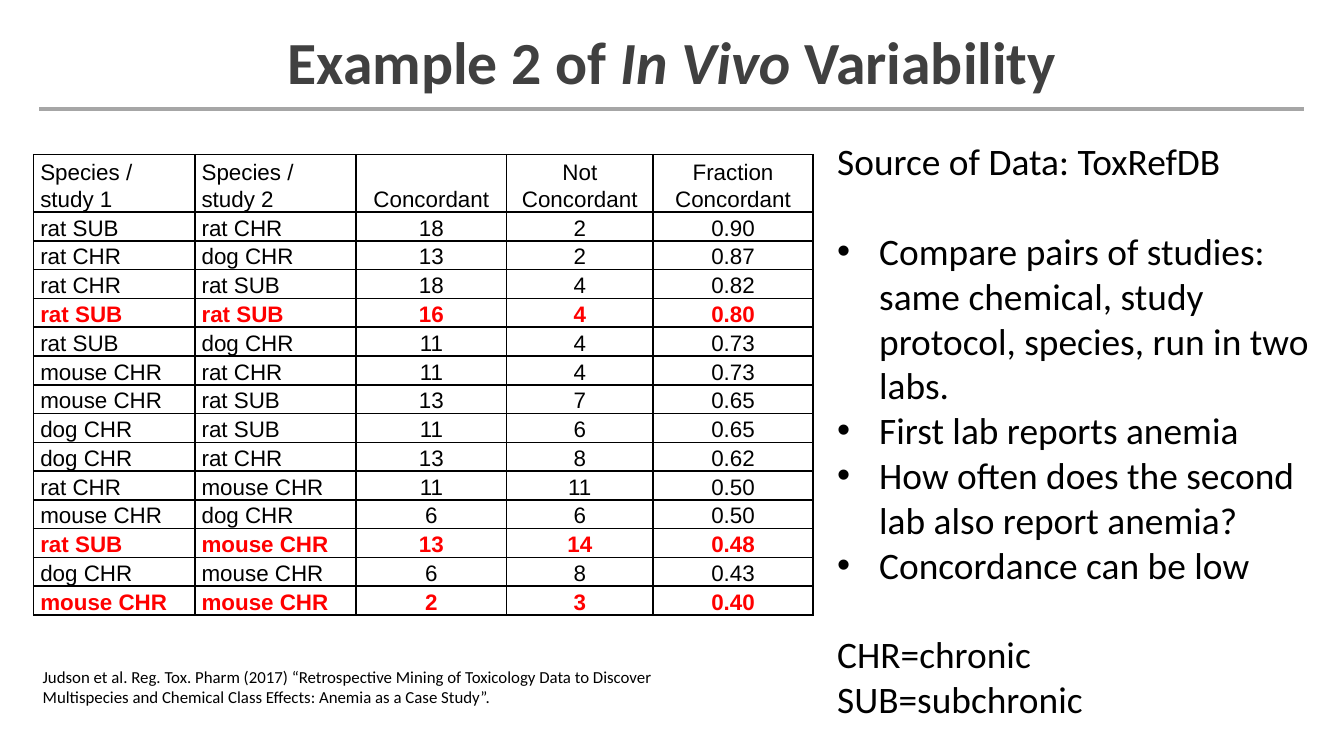
from lxml.etree import SubElement
from pptx import Presentation
from pptx.dml.color import RGBColor
from pptx.enum.shapes import MSO_CONNECTOR
from pptx.enum.text import MSO_ANCHOR, PP_ALIGN
from pptx.oxml.ns import qn
from pptx.util import Pt


def color(hex_string):
    return RGBColor.from_string(hex_string)


def format_runs(paragraph, size, font_name="Calibri", hex_string="000000", bold=False):
    for run in paragraph.runs:
        run.font.size = Pt(size)
        run.font.name = font_name
        run.font.bold = bold
        run.font.color.rgb = color(hex_string)


presentation = Presentation()
presentation.slide_width = Pt(720)
presentation.slide_height = Pt(405)
slide = presentation.slides.add_slide(presentation.slide_layouts[6])

# Title and rule
rule = slide.shapes.add_connector(MSO_CONNECTOR.STRAIGHT, Pt(21), Pt(58.5), Pt(698.5), Pt(58.5))
rule.line.color.rgb = color("A6A6A6")
rule.line.width = Pt(2.5)
SubElement(rule._element.spPr, qn("a:effectLst"))

title = slide.shapes.add_textbox(Pt(54), Pt(-1.4), Pt(612), Pt(67.7))
title.text_frame.word_wrap = True
title.text_frame.vertical_anchor = MSO_ANCHOR.MIDDLE
paragraph = title.text_frame.paragraphs[0]
paragraph.alignment = PP_ALIGN.CENTER
for text, italic in [("Example 2 of ", False), ("In Vivo", True), (" Variability", False)]:
    run = paragraph.add_run()
    run.text = text
    run.font.italic = italic
format_runs(paragraph, 32, hex_string="404040", bold=True)

# Concordance table
rows = [
    ("Species / study 1", "Species / study 2", "Concordant", "Not Concordant", "Fraction Concordant"),
    ("rat SUB", "rat CHR", "18", "2", "0.90"),
    ("rat CHR", "dog CHR", "13", "2", "0.87"),
    ("rat CHR", "rat SUB", "18", "4", "0.82"),
    ("rat SUB", "rat SUB", "16", "4", "0.80"),
    ("rat SUB", "dog CHR", "11", "4", "0.73"),
    ("mouse CHR", "rat CHR", "11", "4", "0.73"),
    ("mouse CHR", "rat SUB", "13", "7", "0.65"),
    ("dog CHR", "rat SUB", "11", "6", "0.65"),
    ("dog CHR", "rat CHR", "13", "8", "0.62"),
    ("rat CHR", "mouse CHR", "11", "11", "0.50"),
    ("mouse CHR", "dog CHR", "6", "6", "0.50"),
    ("rat SUB", "mouse CHR", "13", "14", "0.48"),
    ("dog CHR", "mouse CHR", "6", "8", "0.43"),
    ("mouse CHR", "mouse CHR", "2", "3", "0.40"),
]
highlighted_rows = {4, 12, 14}
column_widths = [86.4, 86.4, 80.6, 78.5, 85.7]
header_height, row_height = 30.7, 15.4

table = slide.shapes.add_table(
    len(rows), len(column_widths), Pt(18), Pt(82.8),
    Pt(sum(column_widths)), Pt(header_height + row_height * (len(rows) - 1)),
).table
table.first_row = False
table.horz_banding = False
for column, width in zip(table.columns, column_widths):
    column.width = Pt(width)

for row_index, values in enumerate(rows):
    table.rows[row_index].height = Pt(row_height if row_index else header_height)
    highlighted = row_index in highlighted_rows
    for column_index, value in enumerate(values):
        cell = table.cell(row_index, column_index)
        cell.margin_left = cell.margin_right = Pt(3.6)
        cell.margin_top = cell.margin_bottom = 0
        cell.vertical_anchor = MSO_ANCHOR.BOTTOM
        for side in ("a:lnL", "a:lnR", "a:lnT", "a:lnB"):
            border = SubElement(cell._tc.get_or_add_tcPr(), qn(side), w=str(Pt(1)))
            SubElement(SubElement(border, qn("a:solidFill")), qn("a:srgbClr"), val="000000")
        cell.fill.solid()
        cell.fill.fore_color.rgb = color("FFFFFF")
        cell.text_frame.text = value
        paragraph = cell.text_frame.paragraphs[0]
        paragraph.line_spacing = 1.07
        paragraph.alignment = PP_ALIGN.LEFT if column_index < 2 else PP_ALIGN.CENTER
        format_runs(paragraph, 12, "Arial", "FF0000" if highlighted else "000000", highlighted)

# Citation
citation = slide.shapes.add_textbox(Pt(15.8), Pt(353.5), Pt(341.3), Pt(28.8))
citation.text_frame.word_wrap = True
citation.text_frame.text = (
    "Judson et al. Reg. Tox. Pharm (2017) “Retrospective Mining of Toxicology Data to Discover "
    "Multispecies and Chemical Class Effects: Anemia as a Case Study”."
)
format_runs(citation.text_frame.paragraphs[0], 9)

# Explanation beside the table
bullets = [
    "Compare pairs of studies: same chemical, study protocol, species, run in two labs.",
    "First lab reports anemia",
    "How often does the second lab also report anemia?",
    "Concordance can be low",
]
abbreviations = ["CHR=chronic", "SUB=subchronic"]
explanation = slide.shapes.add_textbox(Pt(441.4), Pt(70.6), Pt(278.6), Pt(322.6))
explanation.text_frame.word_wrap = True
explanation.text_frame.text = "\n".join(["Source of Data: ToxRefDB", *bullets, *abbreviations])
for paragraph in explanation.text_frame.paragraphs:
    format_runs(paragraph, 20)
    if paragraph.text in (bullets[0], abbreviations[0]):
        paragraph.space_before = Pt(24)
    if paragraph.text in bullets:
        properties = paragraph._p.get_or_add_pPr()
        properties.set("marL", str(Pt(22.5)))
        properties.set("indent", str(Pt(-22.5)))
        SubElement(properties, qn("a:buFont"), typeface="Arial")
        SubElement(properties, qn("a:buChar"), char="•")

presentation.save("out.pptx")
